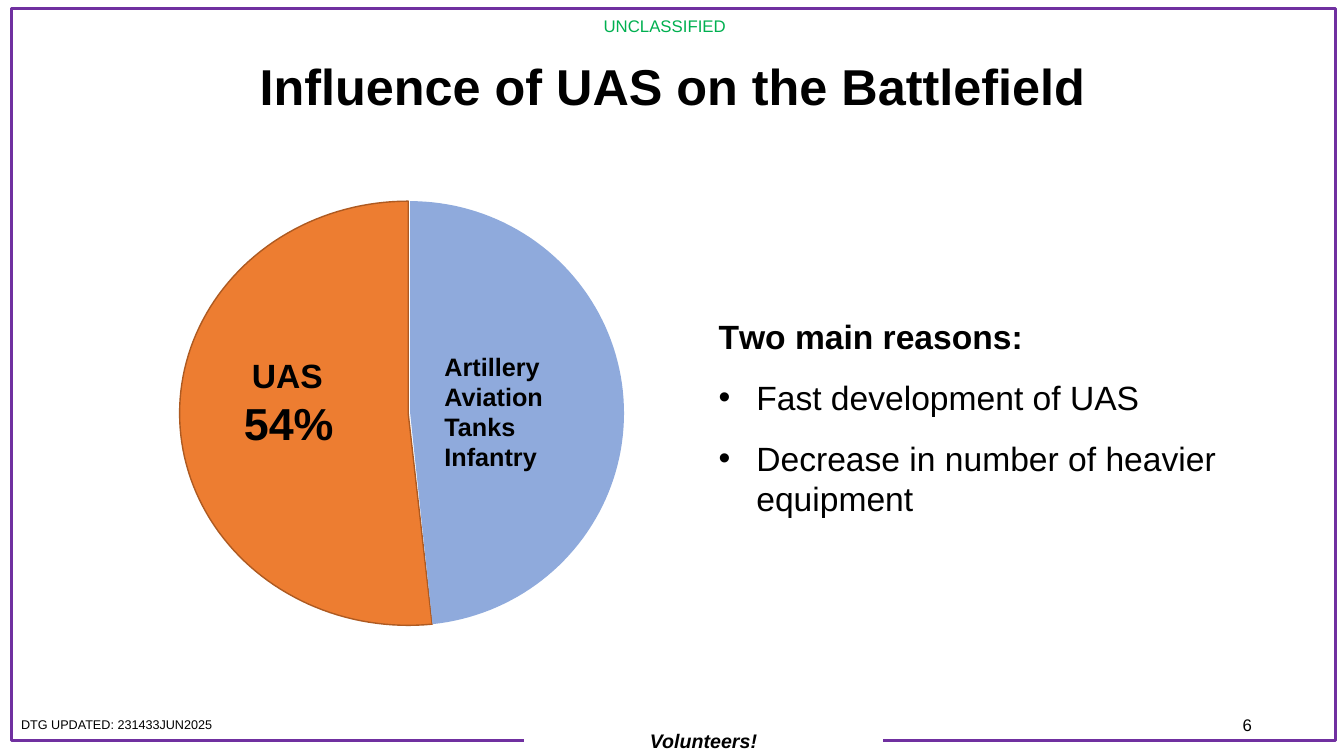
import math

from lxml import etree
from pptx import Presentation
from pptx.dml.color import RGBColor
from pptx.enum.shapes import MSO_SHAPE
from pptx.enum.text import MSO_ANCHOR, PP_ALIGN
from pptx.oxml.ns import qn
from pptx.util import Pt

RECT = MSO_SHAPE.RECTANGLE
TOP, MIDDLE = MSO_ANCHOR.TOP, MSO_ANCHOR.MIDDLE
LEFT, CENTER, RIGHT = PP_ALIGN.LEFT, PP_ALIGN.CENTER, PP_ALIGN.RIGHT

FONT = "Arial"
COLORS = {
    "frame": "7030A0",
    "marking": "00B050",
    "uas": "ED7D31",
    "uas_line": "AE5A21",
    "other": "8FAADC",
    "text": "000000",
    "white": "FFFFFF",
}
DEFAULT_INSETS = (7.2, 3.6, 7.2, 3.6)
TIGHT_INSETS = (0, 0.9, 0, 0)
SPLIT_ANGLE = 174  # degrees clockwise from the top of the pie


def rgb(name):
    return RGBColor.from_string(COLORS[name])


def style_shape(sp, fill=None, line=None, width=1):
    sp.shadow.inherit = False
    if fill:
        sp.fill.solid()
        sp.fill.fore_color.rgb = rgb(fill)
    else:
        sp.fill.background()
    if line:
        sp.line.color.rgb = rgb(line)
        sp.line.width = Pt(width)
    else:
        sp.line.fill.background()


def add_box(s, x, y, w, h, **style):
    sp = s.shapes.add_shape(RECT, Pt(x), Pt(y), Pt(w), Pt(h))
    style_shape(sp, **style)
    return sp


def set_frame(sp, insets=DEFAULT_INSETS, anchor=TOP):
    tf = sp.text_frame
    tf.word_wrap = True
    tf.vertical_anchor = anchor
    tf.margin_left, tf.margin_top, tf.margin_right, tf.margin_bottom = map(Pt, insets)
    return tf


def add_text_box(s, x, y, w, h, **frame):
    return set_frame(s.shapes.add_textbox(Pt(x), Pt(y), Pt(w), Pt(h)), **frame)


def write(tf, text, size, bold=False, italic=False, color="text", align=LEFT,
          margin=0, indent=0, before=None, spacing=None, bullet=None):
    """Write a paragraph, using the empty first one of the frame if there is one."""
    first = tf.paragraphs[0]
    p = tf.add_paragraph() if first.runs else first
    p.alignment = align
    if before is not None:
        p.space_before = Pt(before)
    if spacing:
        p.line_spacing = spacing
    pPr = p._p.get_or_add_pPr()
    pPr.set("marL", str(Pt(margin)))
    pPr.set("indent", str(Pt(indent)))
    if bullet:
        etree.SubElement(pPr, qn("a:buFont")).set("typeface", FONT)
        etree.SubElement(pPr, qn("a:buChar")).set("char", bullet)
    r = p.add_run()
    r.text = text
    r.font.name = FONT
    r.font.size = Pt(size)
    r.font.bold = bold
    r.font.italic = italic
    r.font.color.rgb = rgb(color)


def add_slice(s, cx, cy, rx, ry, start, end, **style):
    """Draw an elliptical sector; angles run clockwise from the top."""
    arc = []
    for angle in range(start, end + 1, 2):
        a = math.radians(angle)
        arc.append((Pt(cx + rx * math.sin(a)), Pt(cy - ry * math.cos(a))))
    builder = s.shapes.build_freeform(Pt(cx), Pt(cy), scale=1.0)
    builder.add_line_segments(arc, close=True)
    style_shape(builder.convert_to_shape(), **style)


def add_page_frame(s):
    add_box(s, 8, 5.8, 946, 523.4, line="frame", width=2)
    tf = add_text_box(s, 342, 8, 265.7, 21.6)
    write(tf, "UNCLASSIFIED", 12, color="marking", align=CENTER)
    motto = add_box(s, 374.4, 517, 256.3, 23.8, fill="white")
    write(set_frame(motto), "Volunteers!", 14, bold=True, italic=True, align=CENTER)
    tf = add_text_box(s, 8, 508.3, 207.4, 18)
    write(tf, "DTG UPDATED: 231433JUN2025", 9)
    tf = add_text_box(s, 678.2, 506.9, 216, 15.8, insets=(0, 0, 0, 0), anchor=MIDDLE)
    write(tf, "6", 12, align=RIGHT, margin=4.3, spacing=1.39)


def add_pie(s):
    add_slice(s, 291.6, 295.2, 163.3, 151.5, SPLIT_ANGLE, 360,
              fill="uas", line="uas_line")
    tf = add_text_box(s, 173.5, 252.7, 69.8, 69.1, insets=TIGHT_INSETS)
    write(tf, "UAS", 24, bold=True, margin=6.5)
    write(tf, "54%", 32, bold=True, margin=0.7, before=0.4)

    add_slice(s, 293, 295.2, 152.8, 151.5, 0, SPLIT_ANGLE, fill="other")
    tf = add_text_box(s, 316.8, 249.8, 79.2, 87.8, insets=TIGHT_INSETS)
    write(tf, "Artillery Aviation Tanks Infantry", 18, bold=True, margin=0.7, spacing=1.0)


def add_reasons(s):
    tf = add_text_box(s, 512.6, 224.6, 381.6, 146.9, insets=TIGHT_INSETS)
    write(tf, "Тwo main reasons:", 24, bold=True, margin=0.7)
    for reason, before in (("Fast development of UAS", 15.2),
                           ("Decrease in number of heavier equipment", 14.2)):
        write(tf, reason, 24, margin=27.7, indent=-27, before=before, bullet="•")


def main():
    prs = Presentation()
    prs.slide_width, prs.slide_height = Pt(960), Pt(540)
    s = prs.slides.add_slide(prs.slide_layouts[6])
    add_page_frame(s)
    add_pie(s)
    add_reasons(s)
    tf = add_text_box(s, 66.2, 38.2, 828, 44.6, insets=TIGHT_INSETS, anchor=MIDDLE)
    write(tf, "Influence of UAS on the Battlefield", 36, bold=True, align=CENTER, margin=0.7)
    prs.save("out.pptx")


if __name__ == "__main__":
    main()
